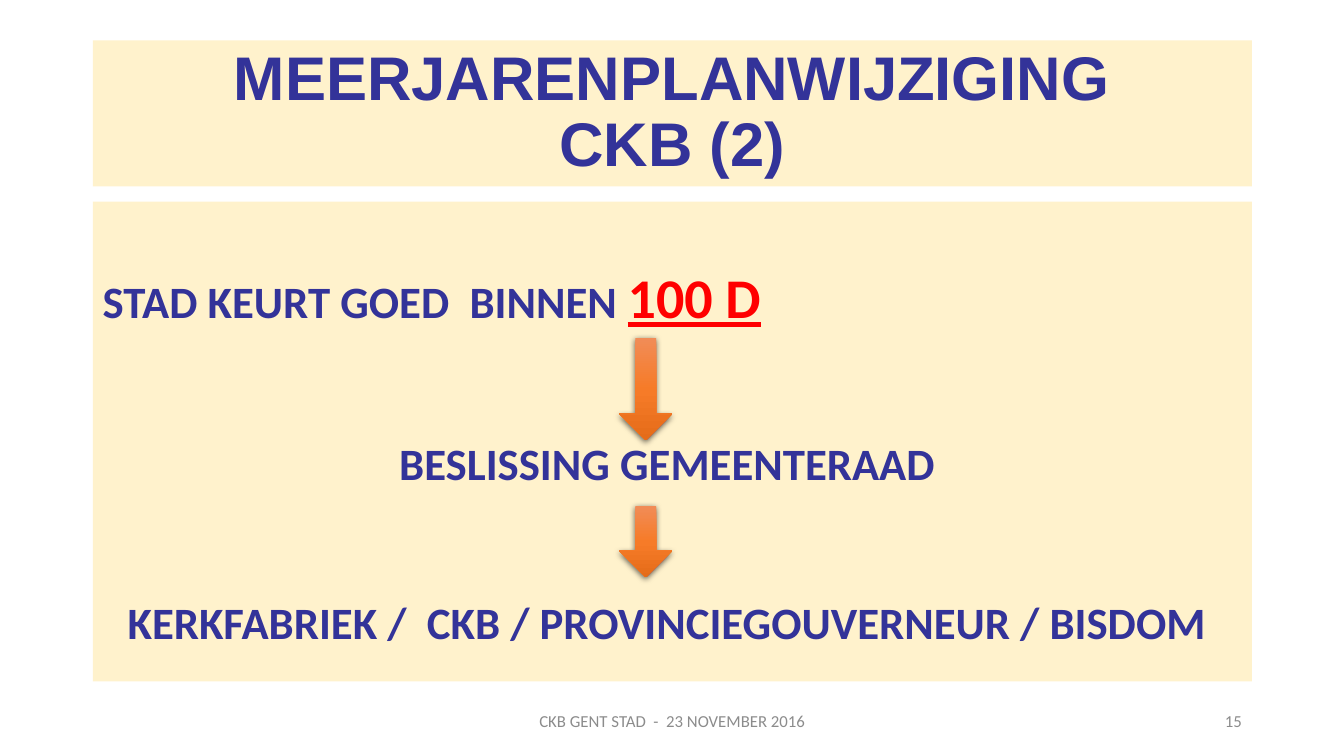
"""Build the slide on the CKB multi-year plan change."""
import pptx
import pptx.util
import pptx.oxml
import pptx.oxml.ns
from pptx.dml.color import RGBColor
from pptx.enum.shapes import MSO_SHAPE
from pptx.enum.text import MSO_ANCHOR, PP_ALIGN
from pptx.util import Cm, Pt

THEME = {
    "panel": "FFF2CC",
    "title": {"name": "Arial", "size": 44, "bold": True, "color": "333399"},
    "body": {"name": "Calibri", "size": 32, "bold": True, "color": "333399"},
    "term": {"name": "Calibri", "size": 40, "bold": True, "underline": True, "color": "FF0000"},
    "footer": {"name": "Calibri", "size": 12, "color": "8C8C8C"},
    "arrow": {0: "F18C57", 50: "F67B28", 100: "E56C19"},
    "shadow": "000000",
}


def add_run(p, text, style):
    r = p.add_run()
    r.text = text
    for key, value in THEME[style].items():
        if key == "color":
            r.font.color.rgb = RGBColor.from_string(value)
        else:
            setattr(r.font, key, Pt(value) if key == "size" else value)


def add_panel(top, height, anchor):
    sp = s.shapes.add_shape(MSO_SHAPE.RECTANGLE, Cm(2.34), Cm(top), Cm(29.21), Cm(height))
    sp.shadow.inherit = False
    sp.fill.solid()
    sp.fill.fore_color.rgb = RGBColor.from_string(THEME["panel"])
    sp.line.fill.background()
    sp.text_frame.word_wrap = True
    sp.text_frame.vertical_anchor = anchor
    return sp.text_frame


prs = pptx.Presentation()
prs.slide_width, prs.slide_height = Cm(33.87), Cm(19.05)
s = prs.slides.add_slide(prs.slide_layouts[6])

p = add_panel(1.02, 3.68, MSO_ANCHOR.MIDDLE).paragraphs[0]
p.alignment = PP_ALIGN.CENTER
p.line_spacing = 0.9
for i, line in enumerate(["MEERJARENPLANWIJZIGING", "CKB (2)"]):
    if i:
        p.add_line_break()
    add_run(p, line, "title")

tf = add_panel(5.08, 12.09, MSO_ANCHOR.TOP)
tf.margin_top = Cm(1.54)
p = tf.paragraphs[0]
p.alignment = PP_ALIGN.LEFT
add_run(p, "STAD KEURT GOED  BINNEN ", "body")
add_run(p, "100 D", "term")
for step in ["BESLISSING GEMEENTERAAD ", "KERKFABRIEK /  CKB / PROVINCIEGOUVERNEUR / BISDOM "]:
    p = tf.add_paragraph()
    p.alignment = PP_ALIGN.CENTER
    p.space_before = Pt(75.5)
    add_run(p, step, "body")

for left, width, align, text in [
    (11.23, 11.43, PP_ALIGN.CENTER, "CKB GENT STAD  -  23 NOVEMBER 2016"),
    (23.93, 7.62, PP_ALIGN.RIGHT, "15"),
]:
    tf = s.shapes.add_textbox(Cm(left), Cm(17.65), Cm(width), Cm(1.02)).text_frame
    tf.word_wrap = True
    tf.vertical_anchor = MSO_ANCHOR.MIDDLE
    tf.paragraphs[0].alignment = align
    add_run(tf.paragraphs[0], text, "footer")

ns = pptx.oxml.ns.nsdecls("a")
stops = "".join(
    f'<a:gs pos="{pos * 1000}"><a:srgbClr val="{color}"/></a:gs>'
    for pos, color in THEME["arrow"].items()
)
gradient = f'<a:gradFill {ns}><a:gsLst>{stops}</a:gsLst><a:lin ang="5400000" scaled="0"/></a:gradFill>'
shadow = (
    f'<a:outerShdw {ns} blurRad="{Pt(4.5)}" dist="{Pt(1.5)}" dir="5400000" rotWithShape="0">'
    f'<a:srgbClr val="{THEME["shadow"]}"><a:alpha val="63000"/></a:srgbClr></a:outerShdw>'
)
for top, height in [(8.51, 2.59), (12.75, 1.8)]:
    sp = s.shapes.add_shape(MSO_SHAPE.DOWN_ARROW, Cm(15.6), Cm(top), Cm(1.35), Cm(height))
    sp.adjustments[0], sp.adjustments[1] = 0.39, 0.5
    sp.line.fill.background()
    sp.shadow.inherit = False
    spPr = sp.element.spPr
    spPr.find(pptx.oxml.ns.qn("a:prstGeom")).addnext(pptx.oxml.parse_xml(gradient))
    spPr.find(pptx.oxml.ns.qn("a:effectLst")).append(pptx.oxml.parse_xml(shadow))

prs.save("out.pptx")
